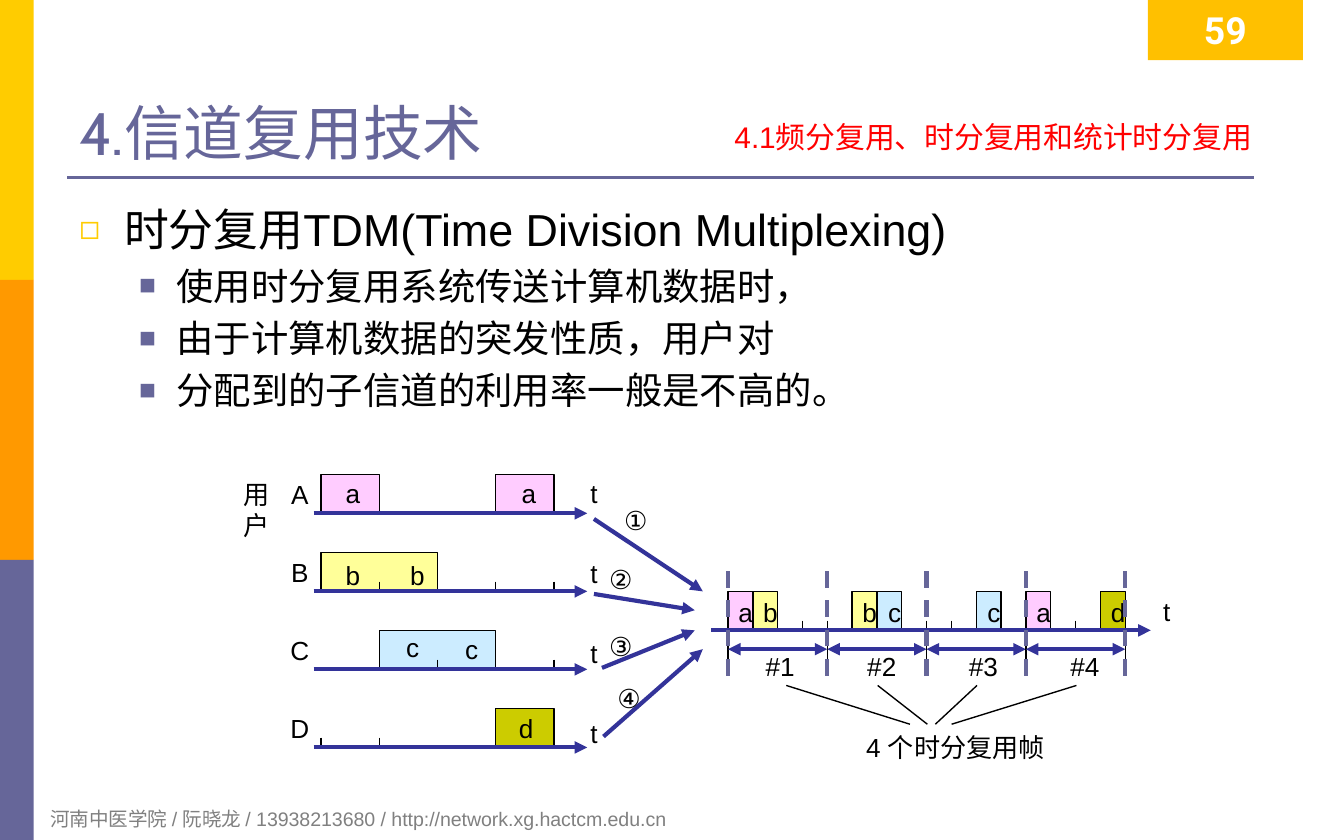
"""Build the slide on time division multiplexing with its four-user timing diagram."""
from lxml.etree import SubElement
from pptx import Presentation
from pptx.dml.color import RGBColor
from pptx.enum.dml import MSO_LINE_DASH_STYLE as DASH
from pptx.enum.shapes import MSO_CONNECTOR_TYPE as LINK, MSO_SHAPE as SHAPE
from pptx.enum.text import MSO_ANCHOR as ANCHOR, MSO_AUTO_SIZE as FIT, PP_ALIGN as ALIGN
from pptx.oxml.ns import qn
from pptx.util import Pt

COLORS = {
    "yellow": "FFCC00", "orange": "FF9900", "slate": "666699", "amber": "FFC000",
    "gray": "808080", "black": "000000", "white": "FFFFFF", "red": "FF0000",
    "axis": "333399", "a": "FFCCFF", "b": "FFFF99", "c": "CCECFF", "d": "CCCC00",
}
RGB = {name: RGBColor.from_string(value) for name, value in COLORS.items()}

deck = Presentation()
deck.slide_width, deck.slide_height = Pt(720), Pt(450)
slide = deck.slides.add_slide(deck.slide_layouts[3])
shapes = slide.shapes


def draw_line(x1, y1, x2, y2, color="black", width=0.75, arrows=()):
    line = shapes.add_connector(LINK.STRAIGHT, Pt(x1), Pt(y1), Pt(x2), Pt(y2))
    line.line.color.rgb = RGB[color]
    line.line.width = Pt(width)
    for end in arrows:
        SubElement(line.line._get_or_add_ln(), qn(f"a:{end}"), type="triangle")
    SubElement(line._element.spPr, qn("a:effectLst"))
    return line


def write(frame, text, size, color="black", font="Arial", align=ALIGN.LEFT, new=False):
    paragraph = frame.add_paragraph() if new else frame.paragraphs[0]
    paragraph.alignment = align
    run = paragraph.add_run()
    run.text = text
    run.font.size, run.font.name = Pt(size), font
    run.font.color.rgb = RGB[color]
    return paragraph


for top, color in [(0, "yellow"), (150, "orange"), (300, "slate")]:
    band = shapes.add_shape(SHAPE.RECTANGLE, 0, Pt(top), Pt(18), Pt(150))
    band.shadow.inherit = False
    band.fill.solid()
    band.fill.fore_color.rgb = RGB[color]
    band.line.fill.background()
draw_line(36, 95, 672, 95, "slate", 1.5)

footer = shapes.add_textbox(Pt(20), Pt(429), Pt(487.5), Pt(20)).text_frame
footer.word_wrap = True
write(footer, "河南中医学院 / 阮晓龙 / 13938213680 / http://network.xg.hactcm.edu.cn", 10.5, "gray")

title, body, section = slide.placeholders
for holder, (left, top, width, height), anchor in [
    (title, (36, 18, 648, 75), ANCHOR.BOTTOM),
    (body, (36, 105, 648, 297.5), ANCHOR.TOP),
    (section, (309, 60.5, 368.5, 28), ANCHOR.TOP),
]:
    holder.left, holder.top, holder.width, holder.height = Pt(left), Pt(top), Pt(width), Pt(height)
    inner = {"vertical_anchor": anchor, "auto_size": FIT.NONE, "word_wrap": True, "margin_left": Pt(6.5),
             "margin_right": Pt(6.5), "margin_top": Pt(3), "margin_bottom": Pt(3)}
    for name, value in inner.items():
        setattr(holder.text_frame, name, value)

write(title.text_frame, "4.信道复用技术", 32, "slate", "Cabin")
heading = write(section.text_frame, "4.1频分复用、时分复用和统计时分复用", 16, "red", align=ALIGN.RIGHT)
heading.space_before = Pt(3.2)
heading_format = heading._p.get_or_add_pPr()
heading_format.set("marL", "0")
heading_format.set("indent", "0")
SubElement(heading_format, qn("a:buNone"))

points = [
    (0, "时分复用TDM(Time Division Multiplexing)"),
    (1, "使用时分复用系统传送计算机数据时，"),
    (1, "由于计算机数据的突发性质，用户对"),
    (1, "分配到的子信道的利用率一般是不高的。"),
]
levels = [(24, 24, -24, "◻", "yellow"), (20, 52, -20, "■", "slate")]
for index, (level, text) in enumerate(points):
    size, margin, indent, mark, color = levels[level]
    point = write(body.text_frame, text, size, new=index > 0)
    point.level = level
    point.space_before = Pt(size * 0.2)
    point_format = point._p.get_or_add_pPr()
    point_format.set("marL", str(Pt(margin)))
    point_format.set("indent", str(Pt(indent)))
    SubElement(SubElement(point_format, qn("a:buClr")), qn("a:srgbClr"), val=COLORS[color])
    SubElement(point_format, qn("a:buSzPct"), val="75000")
    SubElement(point_format, qn("a:buFont"), typeface="Arial")
    SubElement(point_format, qn("a:buChar"), char=mark)

page = shapes.add_shape(SHAPE.RECTANGLE, Pt(615), 0, Pt(83), Pt(32.2))
page.shadow.inherit = False
page.fill.solid()
page.fill.fore_color.rgb = RGB["amber"]
page.line.fill.background()
write(page.text_frame, "59", 20, "white", "Roboto", ALIGN.CENTER).runs[0].font.bold = True

user_x, user_slot, user_y, user_pitch = 172, 31.2, 275, 41.8
link_x, link_slot, link_y, bar_height, tick = 390, 13.3, 337.7, 20.9, 5.2
frame_width = 4 * link_slot
user_bars = [(0, 0, 1, "a"), (0, 3, 1, "a"), (1, 0, 2, "b"), (2, 1, 2, "c"), (3, 3, 1, "d")]
link_bars = [(0, "a"), (1, "b"), (5, "b"), (6, "c"), (10, "c"), (12, "a"), (15, "d")]

bars = [(user_x + slot * user_slot, user_y + row * user_pitch, count * user_slot, data)
        for row, slot, count, data in user_bars]
bars += [(link_x + slot * link_slot, link_y, link_slot, data) for slot, data in link_bars]
for left, base, width, data in bars:
    outline = shapes.build_freeform(Pt(left), Pt(base))
    outline.add_line_segments([(Pt(left), Pt(base - bar_height)), (Pt(left + width), Pt(base - bar_height)),
                               (Pt(left + width), Pt(base))], close=False)
    bar = outline.convert_to_shape()
    bar.shadow.inherit = False
    bar.fill.solid()
    bar.fill.fore_color.rgb = RGB[data]
    bar.line.color.rgb = RGB["black"]
    bar.line.width = Pt(0.75)

ticks = [(user_x + slot * user_slot, user_y + row * user_pitch)
         for row, slots in [(1, (1, 3, 4)), (2, (2, 4)), (3, (0, 1, 3))] for slot in slots]
ticks += [(link_x + slot * link_slot, link_y) for slot in (2, 3, 4, 8, 9, 14)]
for x, y in ticks:
    draw_line(x, y - tick, x, y)

draw_line(381, link_y, 616.5, link_y, "axis", 2.25, ["tailEnd"])
for index in range(5):
    x = link_x + index * frame_width
    draw_line(x, 342.7, x, 352.8)
    if index < 4:
        draw_line(x, 347.8, x + frame_width, 347.8, "axis", 2.25, ["headEnd", "tailEnd"])
for x1, y1, x2, y2 in [(318.2, 278, 376.5, 316.8), (318.2, 318.2, 372.2, 326.9),
                       (322.5, 357.8, 372.2, 337.7), (323.3, 394.6, 376.5, 347.8)]:
    draw_line(x1, y1, x2, y2, "axis", 2.25, ["tailEnd"])
for top_x, bottom_x in [(421.2, 487.5), (470.2, 496.8), (523.4, 501.1), (576.7, 509.8)]:
    draw_line(top_x, 367.2, bottom_x, 388)

labels = [("用户", 137.2, 252.7), ("t", 625, 315.4)]
labels += [("a", 189, 252), ("a", 283.3, 252), ("b", 189, 296), ("b", 223.6, 296),
           ("c", 221, 334.8), ("c", 252.7, 335.5), ("d", 281.9, 378)]
labels += [("①", 340.6, 266.4), ("②", 332.6, 298), ("③", 332.6, 334), ("④", 337, 362.2)]
labels += [(data, link_x + (slot + 0.5) * link_slot + 2.8, 316) for slot, data in link_bars]
for index, user in enumerate("ABCD"):
    labels += [(user, 160.6, 252.7 + index * user_pitch), ("t", 318.2, 252.3 + index * 42.9),
               (f"#{index + 1}", 418 + index * 54.4, 344.9)]
for text, center, top in labels:
    label = shapes.add_textbox(Pt(center - 20), Pt(top), Pt(40), Pt(24.3)).text_frame
    label.word_wrap = False
    write(label, text, 14, align=ALIGN.CENTER)
caption = shapes.add_textbox(Pt(456.5), Pt(388), Pt(111), Pt(24.3)).text_frame
caption.word_wrap = True
write(caption, "4 个时分复用帧", 14, align=ALIGN.CENTER)

for row in range(4):
    y = user_y + row * user_pitch
    draw_line(168, y, 314.6, y, "axis", 2.25, ["tailEnd"])
for index in range(5):
    x = link_x + index * frame_width
    draw_line(x, 306, x, 365.8, "slate", 2.25).line.dash_style = DASH.DASH

deck.save("out.pptx")
